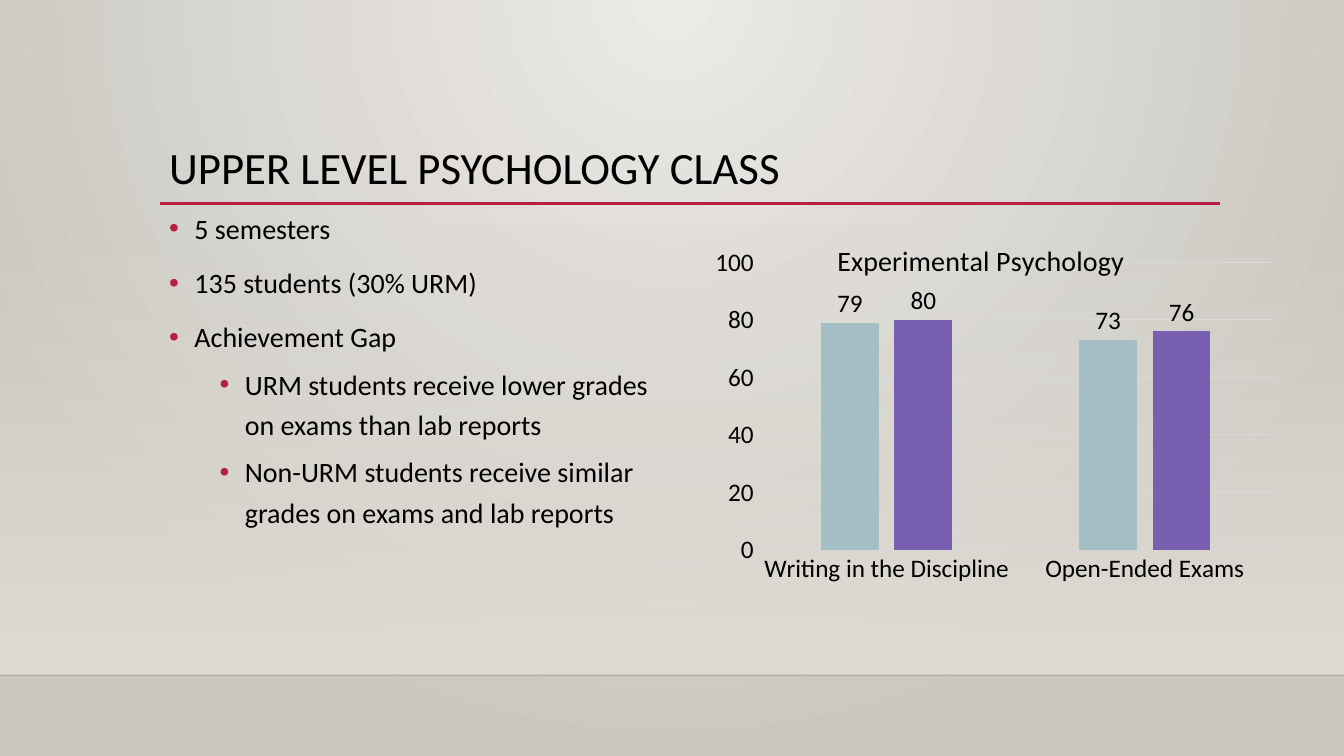
"""Build the Upper Level Psychology Class slide with its grade chart."""
import pptx
import pptx.chart.data
import pptx.dml.color
import pptx.enum.chart
import pptx.enum.shapes
import pptx.enum.text
import pptx.oxml
import pptx.oxml.ns
import pptx.util
from lxml import etree

Inches = pptx.util.Inches
Pt = pptx.util.Pt
qn = pptx.oxml.ns.qn

COLORS = {
    "text": "000000", "accent": "B71E42", "glow": "ECEAE7", "wall": "CAC7C1",
    "haze": "DFDBD5", "floor": "000001", "grid": "D9D9D9",
    "urm": "A4BEC6", "non_urm": "795FAF",
}
FONT = "Calibri"
BULLETS = [
    (0, "5 semesters"),
    (0, "135 students (30% URM)"),
    (0, "Achievement Gap"),
    (1, "URM students receive lower grades on exams than lab reports"),
    (1, "Non-URM students receive similar grades on exams and lab reports"),
]
GRADES = [("URM*", (79, 73), "urm"), ("Non-URM", (80, 76), "non_urm")]
ASSIGNMENTS = ["Writing in the Discipline", "Open-Ended Exams"]


def rgb(name):
    """Return the named colour."""
    return pptx.dml.color.RGBColor.from_string(COLORS[name])


def apply(target, values):
    """Set every attribute listed in values on target."""
    for attribute, value in values.items():
        setattr(target, attribute, value)


def style_font(font, size):
    """Give a font the slide's typeface and text colour."""
    apply(font, {"name": FONT, "size": Pt(size), "bold": False})
    font.color.rgb = rgb("text")


def set_alpha(color_element, percent):
    """Make a colour element partly transparent."""
    etree.SubElement(color_element, qn("a:alpha"), val=str(percent * 1000))


def fill_gradient(fill, start, end):
    """Fill with a two-stop gradient."""
    fill.gradient()
    for stop, name in zip(fill.gradient_stops, (start, end)):
        stop.color.rgb = rgb(name)


def paint_background(slide):
    """Paint a round glow that spreads from the top centre."""
    fill_gradient(slide.background.fill, "glow", "wall")
    gradient = slide.element.find(".//" + qn("a:gradFill"))
    gradient.remove(gradient.find(qn("a:lin")))
    glow = etree.SubElement(gradient, qn("a:path"), path="circle")
    etree.SubElement(glow, qn("a:fillToRect"), l="43000", t="0", r="43000", b="100000")


def add_haze(slide):
    """Add the band that fades in toward the floor."""
    haze = slide.shapes.add_shape(
        pptx.enum.shapes.MSO_SHAPE.RECTANGLE,
        Inches(0), Inches(2.21), Inches(13.33), Inches(4.49))
    haze.shadow.inherit = False
    haze.line.fill.background()
    fill_gradient(haze.fill, "haze", "haze")
    haze.fill.gradient_angle = 270
    set_alpha(haze.element.find(".//" + qn("a:srgbClr")), 0)


def add_rule(slide, left, right, y, color, width, alpha=100):
    """Add a horizontal line."""
    rule = slide.shapes.add_connector(
        pptx.enum.shapes.MSO_CONNECTOR.STRAIGHT,
        Inches(left), Inches(y), Inches(right), Inches(y))
    rule.line.color.rgb = rgb(color)
    rule.line.width = Pt(width)
    if alpha < 100:
        set_alpha(rule.element.find(".//" + qn("a:srgbClr")), alpha)
    etree.SubElement(rule.element.spPr, qn("a:effectLst"))


def add_text_frame(slide, left, top, width, height, anchor):
    """Add a wrapping text box and return its frame."""
    frame = slide.shapes.add_textbox(
        Inches(left), Inches(top), Inches(width), Inches(height)).text_frame
    apply(frame, {"word_wrap": True, "vertical_anchor": anchor})
    return frame


def add_title(slide, text):
    """Add the slide heading."""
    frame = add_text_frame(slide, 1.58, 1.39, 10.36, 0.59,
                           pptx.enum.text.MSO_ANCHOR.MIDDLE)
    heading = frame.paragraphs[0]
    heading.line_spacing = 0.9
    run = heading.add_run()
    run.text = text
    style_font(run.font, 32)


def add_bullet(paragraph, level):
    """Give a paragraph its indent and coloured bullet."""
    properties = paragraph._p.get_or_add_pPr()
    properties.set("marL", str(Inches(0.25 + 0.5 * level)))
    properties.set("indent", str(Inches(-0.25)))
    bullet_color = etree.SubElement(properties, qn("a:buClr"))
    etree.SubElement(bullet_color, qn("a:srgbClr"), val=COLORS["accent"])
    etree.SubElement(properties, qn("a:buFont"), typeface="Arial")
    etree.SubElement(properties, qn("a:buChar"), char="•")


def add_bullets(slide, bullets):
    """Add the bulleted class summary."""
    frame = add_text_frame(slide, 1.58, 1.98, 5.22, 4.92,
                           pptx.enum.text.MSO_ANCHOR.TOP)
    for index, (level, text) in enumerate(bullets):
        paragraph = frame.add_paragraph() if index else frame.paragraphs[0]
        add_bullet(paragraph, level)
        before = (10, 5)[level] if index else 0
        apply(paragraph, {"level": level, "line_spacing": 1.2, "space_before": Pt(before)})
        run = paragraph.add_run()
        run.text = text
        style_font(run.font, 20)


def place_part(part, index, **fractions):
    """Fix a chart part at fractions of the chart area."""
    for old_layout in part.findall(qn("c:layout")):
        part.remove(old_layout)
    layout = etree.Element(qn("c:layout"))
    manual = etree.SubElement(layout, qn("c:manualLayout"))
    if "w" in fractions:
        etree.SubElement(manual, qn("c:layoutTarget"), val="inner")
    for key in ("x", "y"):
        etree.SubElement(manual, qn(f"c:{key}Mode"), val="edge")
    for key, value in fractions.items():
        etree.SubElement(manual, qn(f"c:{key}"), val=str(value))
    part.insert(index, layout)


def style_axes(chart):
    """Format both axes and the gridlines."""
    no_tick = pptx.enum.chart.XL_TICK_MARK.NONE
    for axis in (chart.category_axis, chart.value_axis):
        apply(axis, {"major_tick_mark": no_tick, "minor_tick_mark": no_tick})
        style_font(axis.tick_labels.font, 18)
    apply(chart.value_axis, {"minimum_scale": 0, "maximum_scale": 100,
                             "major_unit": 20, "has_major_gridlines": True})
    chart.value_axis.format.line.fill.background()
    for line in (chart.category_axis.format.line,
                 chart.value_axis.major_gridlines.format.line):
        line.color.rgb = rgb("grid")
        line.width = Pt(0.75)


def add_grade_chart(slide):
    """Add the clustered columns of mean grades."""
    data = pptx.chart.data.CategoryChartData()
    data.categories = ASSIGNMENTS
    for group, grades, _ in GRADES:
        data.add_series(group, grades)
    chart = slide.shapes.add_chart(
        pptx.enum.chart.XL_CHART_TYPE.COLUMN_CLUSTERED,
        Inches(6.65), Inches(2.08), Inches(6.17), Inches(4.38), data).chart
    style_font(chart.font, 10)
    apply(chart, {"has_legend": False, "has_title": True})
    title = chart.chart_title.text_frame.paragraphs[0].add_run()
    title.text = "Experimental Psychology"
    style_font(title.font, 20)
    place_part(chart.chart_title._element, 1, x=0.26, y=0.06)
    place_part(chart._chartSpace.chart.plotArea, 0, x=0.14, y=0.12, w=0.83, h=0.65)
    style_axes(chart)
    plot = chart.plots[0]
    apply(plot, {"gap_width": 219, "overlap": -27, "vary_by_categories": False})
    for series, (_, _, color) in zip(plot.series, GRADES):
        series.format.fill.solid()
        series.format.fill.fore_color.rgb = rgb(color)
        apply(series.data_labels, {
            "show_value": True,
            "position": pptx.enum.chart.XL_LABEL_POSITION.OUTSIDE_END})
        style_font(series.data_labels.font, 18)


def main():
    """Build and save the slide."""
    deck = pptx.Presentation()
    apply(deck, {"slide_width": Inches(13.33), "slide_height": Inches(7.5)})
    slide = deck.slides.add_slide(deck.slide_layouts[6])
    paint_background(slide)
    add_haze(slide)
    add_rule(slide, 0, 13.33, 6.7, "floor", 1, alpha=20)
    add_rule(slide, 1.59, 12.1, 2.02, "accent", 2.5)
    add_title(slide, "UPPER LEVEL PSYCHOLOGY CLASS")
    add_bullets(slide, BULLETS)
    add_grade_chart(slide)
    deck.save("out.pptx")


if __name__ == "__main__":
    main()
